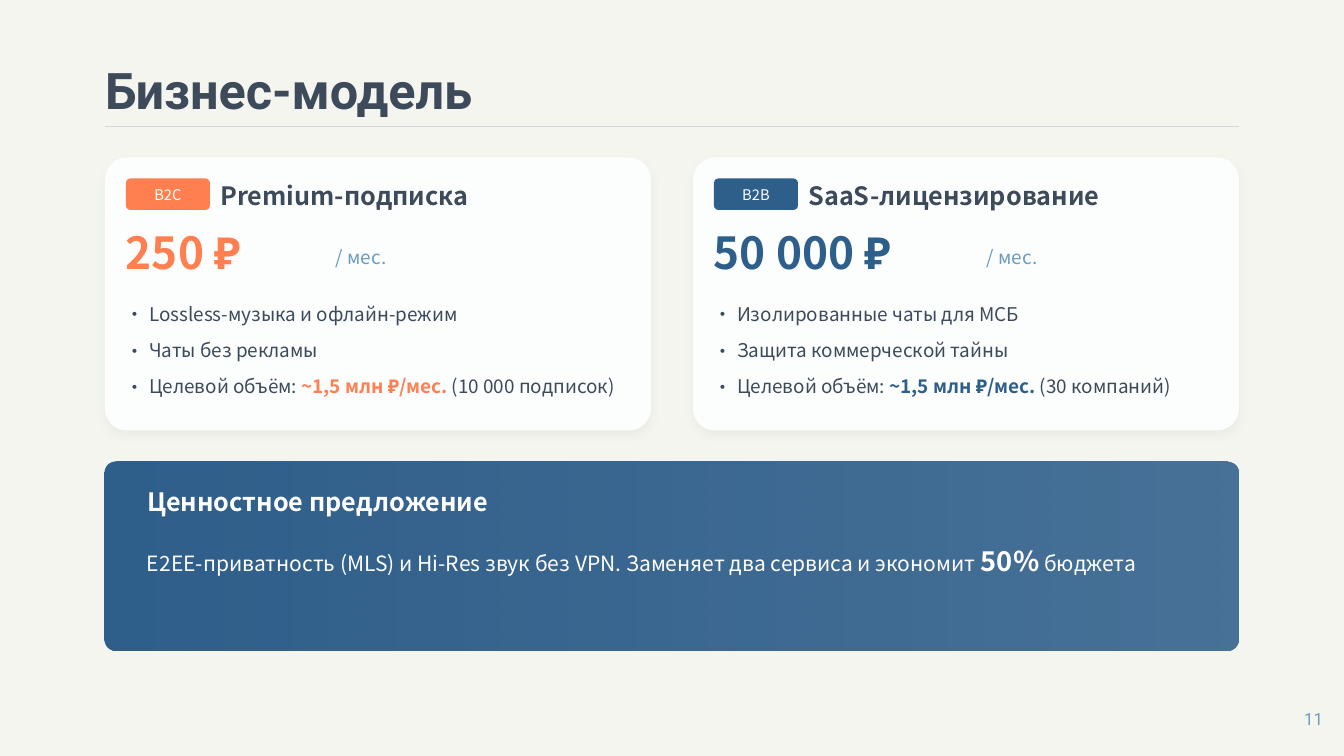
from dataclasses import dataclass

from lxml import etree
from pptx import Presentation
from pptx.dml.color import RGBColor
from pptx.enum.shapes import MSO_CONNECTOR, MSO_SHAPE
from pptx.enum.text import MSO_ANCHOR, MSO_AUTO_SIZE, PP_ALIGN
from pptx.oxml.ns import qn
from pptx.util import Pt

LEFT, CENTER, RIGHT = PP_ALIGN.LEFT, PP_ALIGN.CENTER, PP_ALIGN.RIGHT
TOP, MIDDLE = MSO_ANCHOR.TOP, MSO_ANCHOR.MIDDLE
ROUND, LINE = MSO_SHAPE.ROUNDED_RECTANGLE, MSO_CONNECTOR.STRAIGHT
NO_FIT = MSO_AUTO_SIZE.NONE


@dataclass(frozen=True)
class Theme:
    page: str = "F5F5F0"
    card: str = "FCFDFD"
    ink: str = "3C4A5A"
    rule: str = "D0D6DC"
    coral: str = "FF7F50"
    blue: str = "2E5E8A"
    sky: str = "6B9CBF"
    white: str = "FFFFFF"
    sans: str = "Noto Sans CJK SC"
    head: str = "Roboto"
    title: int = 48
    price: int = 42
    big: int = 26
    sub: int = 24
    lead: int = 20
    body: int = 18
    page_no: int = 16
    tag: int = 14


T = Theme()
LEFT_X, WIDE = 100, 1200
CARD_W, CARD_H, GAP, PAD = 580, 260, 40, 20
CARD_W = (WIDE - 2 * GAP) // 2 - GAP
CARD_STEP = CARD_W + GAP
INDENT = 22


def rgb(code):
    return RGBColor.from_string(code)


def node(parent, tag, **attrs):
    item = etree.SubElement(parent, qn(tag))
    for key, value in attrs.items():
        item.set(key, str(value))
    return item


def place(shape, x, y, w, h):
    shape.left, shape.top, shape.width, shape.height = map(Pt, (x, y, w, h))


def write(shape, lines, size=T.body, color=T.ink, bold=False, font=T.sans,
          align=LEFT, anchor=MIDDLE, spacing=1.0, bullet=False):
    """Each line is a string or a list of (text, overrides) runs."""
    frame = shape.text_frame
    frame.word_wrap, frame.auto_size = True, NO_FIT
    frame.vertical_anchor = anchor
    frame.margin_left = frame.margin_right = 0
    frame.margin_top = frame.margin_bottom = 0
    for i, line in enumerate(lines):
        para = frame.paragraphs[0] if i == 0 else frame.add_paragraph()
        para.alignment, para.line_spacing = align, spacing
        para.space_before = para.space_after = Pt(0)
        if bullet:
            props = para._p.get_or_add_pPr()
            props.set("marL", str(Pt(INDENT)))
            props.set("indent", str(-Pt(INDENT)))
            node(props, "a:buFont", typeface=font)
            node(props, "a:buChar", char="•")
        for text, extra in [(line, {})] if isinstance(line, str) else line:
            run = para.add_run()
            run.text = text
            run.font.name = font
            run.font.size = Pt(extra.get("size", size))
            run.font.bold = extra.get("bold", bold)
            run.font.color.rgb = rgb(extra.get("color", color))
            for tag in ("a:ea", "a:cs"):
                node(run._r.get_or_add_rPr(), tag, typeface=font)


def label(slide, box, text, **fmt):
    shape = slide.shapes.add_textbox(*map(Pt, box))
    write(shape, [text], **fmt)


def panel(slide, box, fill, curve):
    shape = slide.shapes.add_shape(ROUND, *map(Pt, box))
    shape.adjustments[0] = curve
    shape.shadow.inherit = False
    shape.fill.solid()
    shape.fill.fore_color.rgb = rgb(fill)
    shape.line.fill.background()
    return shape


def shade(shape):
    effects = shape._element.spPr.find(qn("a:effectLst"))
    outer = node(effects, "a:outerShdw", blurRad=Pt(10), dist=Pt(4),
                 dir=90 * 60000, algn="ctr", rotWithShape=0)
    node(node(outer, "a:srgbClr", val="000000"), "a:alpha", val=3000)


def fade(shape, color):
    shape.fill.gradient()
    shape.fill.gradient_angle = 0
    for stop, pos in zip(shape.fill.gradient_stops, (0, 1)):
        stop.position = pos
        stop.color.rgb = rgb(color)
    last = shape._element.spPr.findall(".//" + qn("a:srgbClr"))[-1]
    node(last, "a:alpha", val=87000)


def rule(slide, x, y, w):
    line = slide.shapes.add_connector(LINE, Pt(x), Pt(y), Pt(x + w), Pt(y))
    line.line.color.rgb = rgb(T.rule)
    line.line.width = Pt(1)
    node(line._element.spPr, "a:effectLst")


def offer(slide, x, hold, tag, name, price, price_w, color, points, count):
    shade(panel(slide, (x, 150, CARD_W, CARD_H), T.card, 0.08))
    left = x + PAD
    # Tag and heading
    badge = panel(slide, (left, 170, 80, 30), color, 0.14)
    write(badge, [tag], size=T.tag, color=T.white, align=CENTER)
    label(slide, (left + 90, 168, 390, 36), name, size=T.sub, bold=True)
    # Price
    label(slide, (left, 215, price_w, 50), price,
          size=T.price, color=color, bold=True)
    label(slide, (left + price_w, 230, 100, 30), "/ мес.", color=T.sky)
    # List, brought in front of its card
    place(hold, left, 275, 480, 120)
    goal = [("Целевой объём: ", {}),
            ("~1,5 млн ₽/мес.", {"color": color, "bold": True}),
            (f" ({count})", {})]
    write(hold, points + [goal], anchor=TOP, spacing=1.6, bullet=True)
    slide.shapes._spTree.append(hold._element)


def main():
    deck = Presentation()
    deck.slide_width, deck.slide_height = Pt(1280), Pt(720)
    slide = deck.slides.add_slide(deck.slide_layouts[3])
    slide.background.fill.solid()
    slide.background.fill.fore_color.rgb = rgb(T.page)
    title, first, second = slide.placeholders

    # Title
    place(title, LEFT_X, 60, 800, 50)
    write(title, ["Бизнес-модель"], size=T.title, bold=True, font=T.head)
    rule(slide, LEFT_X, 120.5, WIDE - 120)

    # Two offers
    offers = [
        (first, "B2C", "Premium-подписка", "250 ₽", 200, T.coral,
         ["Lossless-музыка и офлайн-режим", "Чаты без рекламы"],
         "10 000 подписок"),
        (second, "B2B", "SaaS-лицензирование", "50 000 ₽", 260, T.blue,
         ["Изолированные чаты для МСБ", "Защита коммерческой тайны"],
         "30 компаний"),
    ]
    for i, item in enumerate(offers):
        offer(slide, LEFT_X + i * CARD_STEP, *item)

    # Value statement
    fade(panel(slide, (LEFT_X, 440, WIDE - 120, 180), T.blue, 0.06), T.blue)
    label(slide, (140, 460, 400, 36), "Ценностное предложение",
          size=T.sub, color=T.white, bold=True)
    pitch = [("E2EE-приватность (MLS) и Hi-Res звук без VPN. "
              "Заменяет два сервиса и экономит ", {}),
             ("50%", {"size": T.big, "bold": True}), (" бюджета", {})]
    label(slide, (140, 500, 1000, 110), pitch, size=T.lead, color=T.white,
          anchor=TOP, spacing=1.6)

    # Page number
    label(slide, (1180, 670, 80, 30), "11", size=T.page_no, color=T.sky,
          font=T.head, align=RIGHT)
    deck.save("out.pptx")


if __name__ == "__main__":
    main()
